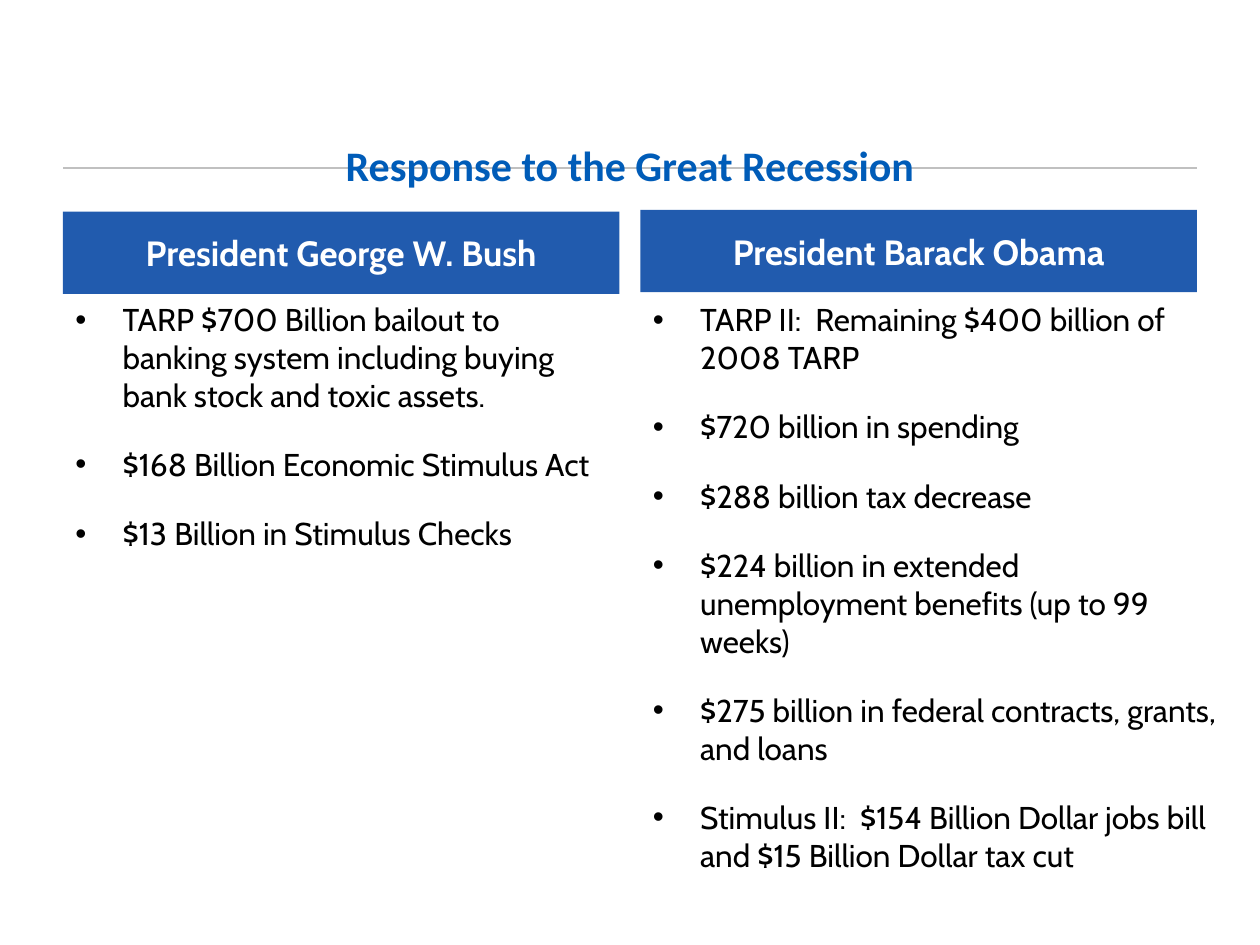
from lxml.etree import SubElement
from pptx import Presentation
from pptx.dml.color import RGBColor
from pptx.enum.shapes import MSO_CONNECTOR, MSO_SHAPE
from pptx.enum.text import MSO_ANCHOR, PP_ALIGN
from pptx.oxml.ns import qn
from pptx.util import Pt

LEFT = 36
RIGHT = 684
COLUMN_WIDTH = 318
HEADER_HEIGHT = 47
BODY_TOP = 168
RULE_Y = 96

BUSH_POINTS = [
    "TARP $700 Billion bailout to banking system including buying bank stock and toxic assets.",
    "$168 Billion Economic Stimulus Act",
    "$13 Billion in Stimulus Checks",
]
OBAMA_POINTS = [
    "TARP II:  Remaining $400 billion of 2008 TARP",
    "$720 billion in spending",
    "$288 billion tax decrease",
    "$224 billion in extended unemployment benefits (up to 99 weeks)",
    "$275 billion in federal contracts, grants, and loans",
    "Stimulus II:  $154 Billion Dollar jobs bill and $15 Billion Dollar tax cut",
]


def color(value):
    return RGBColor.from_string(value)


def set_font(paragraph, name, size, value, bold=False):
    paragraph.font.name = name
    paragraph.font.size = Pt(size)
    paragraph.font.color.rgb = color(value)
    paragraph.font.bold = bold


def add_rule(slide):
    rule = slide.shapes.add_connector(
        MSO_CONNECTOR.STRAIGHT, Pt(LEFT), Pt(RULE_Y), Pt(RIGHT), Pt(RULE_Y)
    )
    rule.line.color.rgb = color("C0C0C0")
    rule.line.width = Pt(1.25)
    SubElement(rule.element.spPr, qn("a:effectLst"))


def format_title(slide, text):
    title = slide.shapes.title
    title.left, title.top = Pt(LEFT), Pt(48)
    title.width, title.height = Pt(RIGHT - LEFT), Pt(48)
    title.element.getparent().append(title.element)
    frame = title.text_frame
    frame.text = text
    frame.word_wrap = True
    frame.vertical_anchor = MSO_ANCHOR.TOP
    paragraph = frame.paragraphs[0]
    paragraph.alignment = PP_ALIGN.CENTER
    paragraph.line_spacing = Pt(57)
    set_font(paragraph, "Calibri", 24, "005CB8", bold=True)


def add_header(slide, left, top, text):
    header = slide.shapes.add_shape(
        MSO_SHAPE.RECTANGLE, Pt(left), Pt(top), Pt(COLUMN_WIDTH), Pt(HEADER_HEIGHT)
    )
    header.shadow.inherit = False
    header.fill.solid()
    header.fill.fore_color.rgb = color("215BAE")
    header.line.fill.background()
    frame = header.text_frame
    frame.text = text
    frame.vertical_anchor = MSO_ANCHOR.MIDDLE
    paragraph = frame.paragraphs[0]
    paragraph.alignment = PP_ALIGN.CENTER
    set_font(paragraph, "Cabin", 20, "FFFFFF", bold=True)


def add_bullets(slide, left, width, height, points):
    box = slide.shapes.add_textbox(Pt(left), Pt(BODY_TOP), Pt(width), Pt(height))
    frame = box.text_frame
    frame.word_wrap = True
    frame.text = "\n".join(points)
    for paragraph in frame.paragraphs:
        paragraph.space_after = Pt(18)
        properties = paragraph._p.get_or_add_pPr()
        properties.set("marL", str(Pt(27)))
        properties.set("indent", str(Pt(-27)))
        SubElement(properties, qn("a:buFont"), typeface="Arial")
        SubElement(properties, qn("a:buChar"), char="•")
        set_font(paragraph, "Cabin", 18, "000000")


def main():
    presentation = Presentation()
    presentation.slide_width = Pt(720)
    presentation.slide_height = Pt(540)
    slide = presentation.slides.add_slide(presentation.slide_layouts[5])
    right_column = RIGHT - COLUMN_WIDTH
    add_rule(slide)
    add_header(slide, LEFT, 121, "President George W. Bush")
    add_bullets(slide, LEFT, COLUMN_WIDTH, 361, BUSH_POINTS)
    add_bullets(slide, right_column, 340.5, 387, OBAMA_POINTS)
    add_header(slide, right_column, 120, "President Barack Obama")
    format_title(slide, "Response to the Great Recession")
    presentation.save("out.pptx")


if __name__ == "__main__":
    main()
